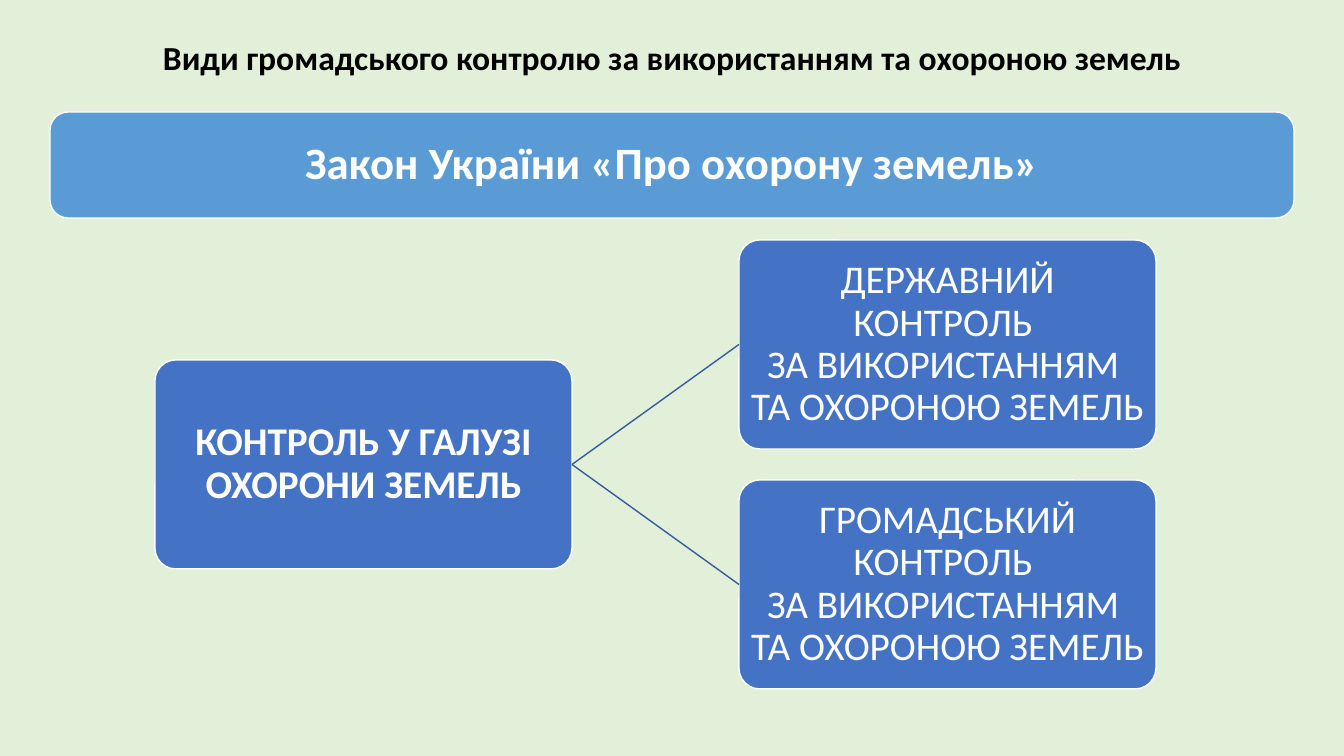
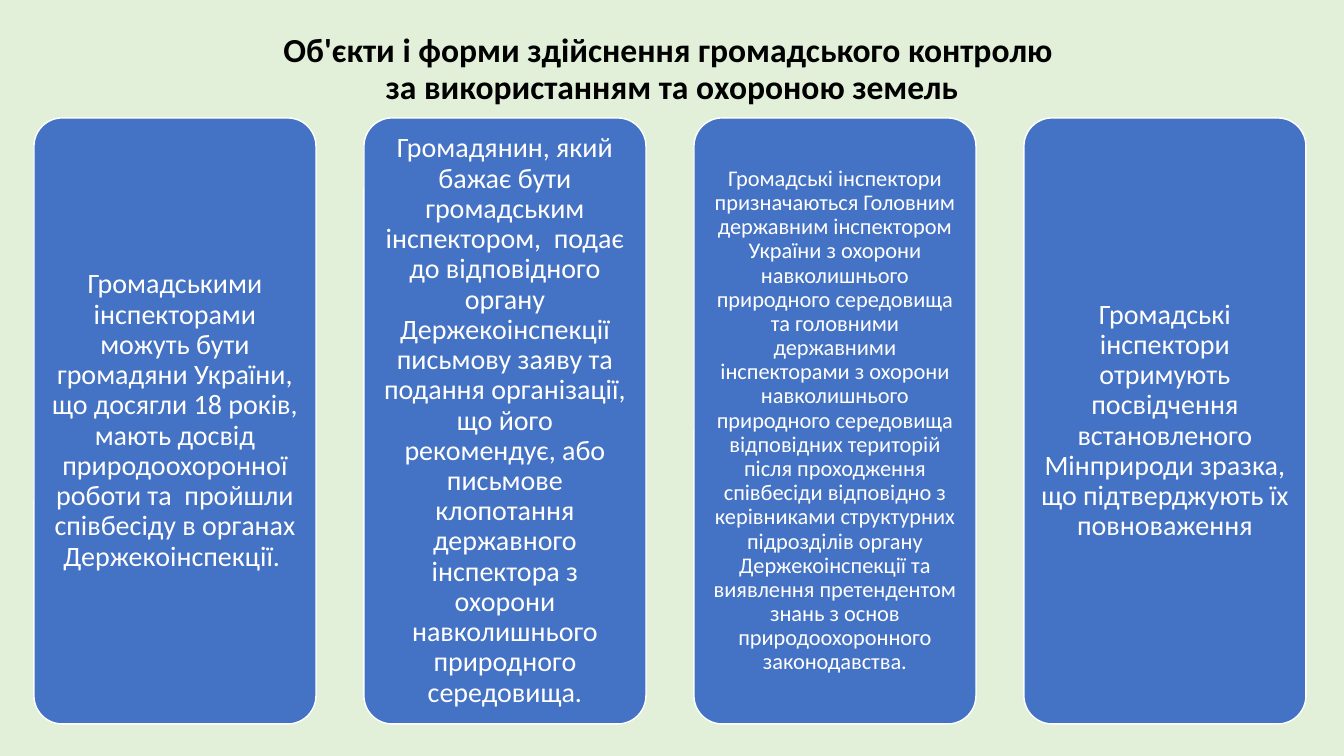
from lxml import etree
from pptx import Presentation
from pptx import util as u
from pptx.dml.color import RGBColor
from pptx.enum import shapes, text
from pptx.oxml.ns import qn

SCALE = 914400 / 100.8  # EMU in one px
FONT = "Calibri"
COLORS = {
    "background": "E2F0D9",
    "title": "000000",
    "banner": "5B9BD5",
    "box": "4472C4",
    "connector": "365B9D",
    "white": "FFFFFF",
}


def write_text(frame, paragraphs, size, color, bold, inset):
    """Fill a frame with centred paragraphs; a newline is a line break."""
    frame.word_wrap = True
    frame.auto_size = text.MSO_AUTO_SIZE.NONE
    frame.vertical_anchor = text.MSO_ANCHOR.MIDDLE
    frame.margin_left = frame.margin_right = round(inset * SCALE)
    frame.margin_top = frame.margin_bottom = round(inset * SCALE)
    for index, wording in enumerate(paragraphs):
        paragraph = frame.add_paragraph() if index else frame.paragraphs[0]
        paragraph.alignment = text.PP_ALIGN.CENTER
        paragraph.line_spacing = 0.9
        for number, line in enumerate(wording.split("\n")):
            if number:
                paragraph.add_line_break()
            run = paragraph.add_run()
            run.text = line
            run.font.name = FONT
            run.font.size = u.Pt(size)
            run.font.bold = bold
            run.font.color.rgb = RGBColor.from_string(COLORS[color])


def add_box(slide, place, paragraphs, size, inset, bold=False, fill="box", corner=0.1):
    """Add a rounded box with a white outline and white text."""
    left, top, width, height = [round(length * SCALE) for length in place]
    shape = slide.shapes.add_shape(
        shapes.MSO_SHAPE.ROUNDED_RECTANGLE, left, top, width, height)
    shape.adjustments[0] = corner
    shape.shadow.inherit = False
    shape.fill.solid()
    shape.fill.fore_color.rgb = RGBColor.from_string(COLORS[fill])
    shape.line.color.rgb = RGBColor.from_string(COLORS["white"])
    shape.line.width = u.Pt(1)
    write_text(shape.text_frame, paragraphs, size, "white", bold, inset)
    return shape


# Presentation and shared background
presentation = Presentation()
presentation.slide_width = round(1344 * SCALE)
presentation.slide_height = round(756 * SCALE)
background = presentation.slide_master.background.fill
background.solid()
background.fore_color.rgb = RGBColor.from_string(COLORS["background"])

# Slides with their titles: wording, top, height
titles = [
    ("Види громадського контролю за використанням та охороною земель", 23, 74),
    ("Об'єкти і форми здійснення громадського контролю \n"
     "за використанням та охороною земель", 21, 98),
]
slides = []
for wording, top, height in titles:
    slide = presentation.slides.add_slide(presentation.slide_layouts[5])
    title = slide.shapes.title
    title.left, title.top = round(92 * SCALE), round(top * SCALE)
    title.width, title.height = round(1160 * SCALE), round(height * SCALE)
    write_text(title.text_frame, [wording], 24, "title", True, 5)
    slides.append(slide)
control_slide, inspector_slide = slides

# Slide 1: banner with the law
add_box(control_slide, (50, 112, 1244, 106), ["Закон України «Про охорону земель»"],
        32, 13, bold=True, fill="banner", corner=0.17)

# Slide 1: control and its two kinds
BOX_WIDTH, BOX_HEIGHT = 417, 209
control_box = add_box(control_slide, (155, 360, BOX_WIDTH, BOX_HEIGHT),
                      ["КОНТРОЛЬ У ГАЛУЗІ ОХОРОНИ ЗЕМЕЛЬ"], 28, 2, bold=True)
for row, kind in enumerate(["ДЕРЖАВНИЙ", "ГРОМАДСЬКИЙ"]):
    kind_box = add_box(
        control_slide, (739, 240 + 240 * row, BOX_WIDTH, BOX_HEIGHT),
        [kind + " КОНТРОЛЬ ", "ЗА ВИКОРИСТАННЯМ ", "ТА ОХОРОНОЮ ЗЕМЕЛЬ"], 28, 2)
    connector = control_slide.shapes.add_connector(
        shapes.MSO_CONNECTOR.STRAIGHT, 0, 0, 0, 0)
    connector.begin_connect(control_box, 3)
    connector.end_connect(kind_box, 1)
    connector.line.color.rgb = RGBColor.from_string(COLORS["connector"])
    connector.line.width = u.Pt(1)
    etree.SubElement(connector._element.spPr, qn("a:effectLst"))

# Slide 2: four cards on public inspectors: wording, text size, inset
cards = [
    ("Громадськими інспекторами можуть бути громадяни України, що досягли "
     "18 років, мають досвід природоохоронної роботи та  пройшли співбесіду "
     "в органах Держекоінспекції. ", 20, 8),
    ("Громадянин, який бажає бути громадським інспектором,  подає до "
     "відповідного органу Держекоінспекції письмову заяву та подання "
     "організації, що його рекомендує, або письмове клопотання державного "
     "інспектора з охорони навколишнього природного середовища.", 20, 8),
    ("Громадські інспектори призначаються Головним державним інспектором "
     "України з охорони навколишнього природного середовища та головними "
     "державними інспекторами з охорони навколишнього природного середовища "
     "відповідних територій після проходження співбесіди відповідно з "
     "керівниками структурних підрозділів органу Держекоінспекції та "
     "виявлення претендентом знань з основ природоохоронного законодавства.", 16, 7),
    ("Громадські інспектори отримують посвідчення встановленого Мінприроди "
     "зразка, що підтверджують їх повноваження", 20, 8),
]
for column, (wording, size, inset) in enumerate(cards):
    add_box(inspector_slide, (34 + 330 * column, 118, 282, 606), [wording], size, inset)

presentation.save("out.pptx")
